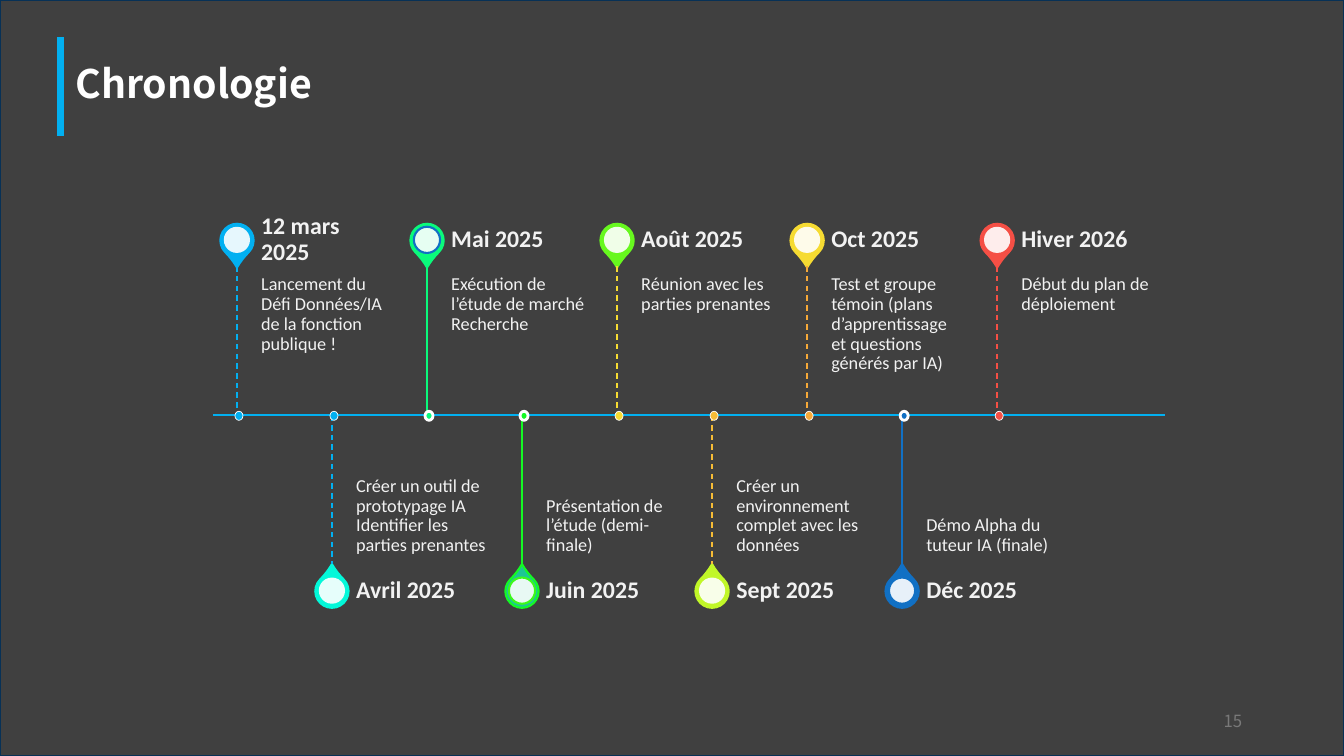
"""Build the dark "Chronologie" slide: nine pinned milestones alternating around an axis."""
from dataclasses import dataclass
from typing import Optional

import pptx
import pptx.dml.color
import pptx.enum.dml
import pptx.enum.shapes
import pptx.enum.text
import pptx.oxml
import pptx.oxml.ns
import pptx.shapes.autoshape
import pptx.shapes.base
import pptx.shapes.connector
import pptx.slide
import pptx.text.text
import pptx.util

Inches = pptx.util.Inches
Shape = pptx.enum.shapes.MSO_SHAPE
Anchor = pptx.enum.text.MSO_ANCHOR
Align = pptx.enum.text.PP_ALIGN


@dataclass(frozen=True)
class Theme:
    background: str = "404040"
    frame: str = "073156"
    accent: str = "02B0F1"
    white: str = "FFFFFF"
    text: str = "F2F2F2"
    muted: str = "797979"
    heading_font: str = "Noto Sans CJK SC"
    body_font: str = "Calibri"
    title_size: float = 28
    date_size: float = 17
    detail_size: float = 13
    number_size: float = 12


@dataclass(frozen=True)
class Box:
    left: float
    top: float
    width: float
    height: float


@dataclass(frozen=True)
class TextStyle:
    font: str
    size: float
    color: str
    bold: bool = False
    align: Align = Align.LEFT
    line_spacing: float = 1.0


@dataclass(frozen=True)
class Milestone:
    date: str
    detail: str
    pin: str
    stem: str
    ring: Optional[str] = None


THEME = Theme()
DATE_STYLE = TextStyle(THEME.body_font, THEME.date_size, THEME.text, True, line_spacing=0.9)
DETAIL_STYLE = TextStyle(THEME.body_font, THEME.detail_size, THEME.text, line_spacing=0.9)
AXIS_Y = 4.12
STEM_LENGTH = 1.48
FIRST_X, LAST_X = 2.35, 9.89
TEXT_WIDTH = 1.42
DATE_HEIGHT = 0.52

MILESTONES = (
    Milestone("12 mars 2025", "Lancement du Défi Données/IA de la fonction publique !", "02B0F1", "02B0F1"),
    Milestone("Avril 2025", "Créer un outil de prototypage IA\nIdentifier les parties prenantes",
              "03F8D9", "02B0F1"),
    Milestone("Mai 2025", "Exécution de l’étude de marché\nRecherche", "0AFA7B", "0AFA7B", "1170C4"),
    Milestone("Juin 2025", "Présentation de l’étude (demi-finale)", "1DC695", "14F924", "3DF91A"),
    Milestone("Août 2025", "Réunion avec les parties prenantes", "67F81E", "F6DB32"),
    Milestone("Sept 2025", "Créer un environnement complet avec les données", "C1F728", "F6BC36"),
    Milestone("Oct 2025", "Test et groupe témoin (plans d’apprentissage et questions générés par IA)",
              "F6DB32", "F6A938"),
    Milestone("Déc 2025", "Démo Alpha du tuteur IA (finale)", "1170C4", "1170C4", "1170C4"),
    Milestone("Hiver 2026", "Début du plan de déploiement", "F54F45", "F54F45"),
)


def rgb(color: str) -> pptx.dml.color.RGBColor:
    """Turn a hexadecimal string into a colour."""
    return pptx.dml.color.RGBColor.from_string(color)


def place(shape: pptx.shapes.base.BaseShape, box: Box) -> None:
    """Move and size a shape."""
    shape.left, shape.top = Inches(box.left), Inches(box.top)
    shape.width, shape.height = Inches(box.width), Inches(box.height)


def add_figure(page: pptx.slide.Slide, kind: Shape, box: Box, fill: str,
               line: Optional[str] = None, weight: float = 1.5) -> pptx.shapes.autoshape.Shape:
    """Draw a filled preset shape with an optional outline."""
    figure = page.shapes.add_shape(kind, 0, 0, 0, 0)
    place(figure, box)
    figure.shadow.inherit = False
    figure.fill.solid()
    figure.fill.fore_color.rgb = rgb(fill)
    if line is None:
        figure.line.fill.background()
    else:
        figure.line.color.rgb = rgb(line)
        figure.line.width = pptx.util.Pt(weight)
    return figure


def add_line(page: pptx.slide.Slide, start: tuple[float, float], end: tuple[float, float],
             color: str, weight: float) -> pptx.shapes.connector.Connector:
    """Draw a straight line without a shadow."""
    line = page.shapes.add_connector(
        pptx.enum.shapes.MSO_CONNECTOR.STRAIGHT, *(Inches(value) for value in start + end))
    line.line.color.rgb = rgb(color)
    line.line.width = pptx.util.Pt(weight)
    line._element.spPr.append(pptx.oxml.parse_xml(f"<a:effectLst {pptx.oxml.ns.nsdecls('a')}/>"))
    return line


def write(frame: pptx.text.text.TextFrame, text: str, style: TextStyle, anchor: Anchor) -> None:
    """Fill a text frame with one styled paragraph."""
    frame.word_wrap = True
    frame.vertical_anchor = anchor
    para = frame.paragraphs[0]
    para.text = text
    para.alignment = style.align
    para.line_spacing = style.line_spacing
    para.font.name = style.font
    para.font.size = pptx.util.Pt(style.size)
    para.font.bold = style.bold
    para.font.color.rgb = rgb(style.color)


def add_text(page: pptx.slide.Slide, box: Box, text: str, style: TextStyle, anchor: Anchor,
             insets: tuple[float, float, float, float] = (0.1, 0.05, 0.1, 0.05)) -> None:
    """Add a text box with left, top, right and bottom insets."""
    frame = page.shapes.add_textbox(0, 0, 0, 0)
    place(frame, box)
    body = frame.text_frame
    body.margin_left, body.margin_top, body.margin_right, body.margin_bottom = map(Inches, insets)
    write(body, text, style, anchor)


def add_milestone(page: pptx.slide.Slide, milestone: Milestone, x: float, above: bool) -> None:
    """Draw a milestone's pin, texts, stem and axis dot."""
    stem_end = AXIS_Y - STEM_LENGTH if above else AXIS_Y + STEM_LENGTH
    date_top = stem_end - DATE_HEIGHT if above else stem_end
    ringed = milestone.ring is not None

    pin = add_figure(page, Shape.TEAR, Box(x - 0.165, date_top + 0.1, 0.33, 0.33),
                     milestone.pin, milestone.stem if ringed else milestone.pin)
    pin.adjustments[0] = 1.15
    pin.rotation = 135 if above else 315
    disc = add_figure(page, Shape.OVAL, Box(x - 0.13, date_top + 0.13, 0.26, 0.26),
                      THEME.white, milestone.ring)
    tint = disc._element.spPr.find(pptx.oxml.ns.qn("a:solidFill"))[0]
    tint.append(pptx.oxml.parse_xml(f"<a:alpha {pptx.oxml.ns.nsdecls('a')} val='90000'/>"))

    text_left = x + 0.24
    add_text(page, Box(text_left, min(AXIS_Y, stem_end), TEXT_WIDTH, STEM_LENGTH),
             milestone.detail, DETAIL_STYLE, Anchor.TOP if above else Anchor.BOTTOM,
             (0, 0.09, 0.09, 0.14) if above else (0, 0.14, 0, 0.09))
    add_text(page, Box(text_left, date_top, TEXT_WIDTH, DATE_HEIGHT),
             milestone.date, DATE_STYLE, Anchor.MIDDLE, (0, 0, 0.12, 0))

    stem = add_line(page, (x, min(AXIS_Y, stem_end)), (x, max(AXIS_Y, stem_end)), milestone.stem, 1)
    if not ringed:
        stem.line.dash_style = pptx.enum.dml.MSO_LINE.DASH
    add_figure(page, Shape.OVAL, Box(x - 0.02, AXIS_Y - 0.04, 0.08, 0.09),
               milestone.stem, THEME.white, 2 if ringed else 0.5)


def main() -> None:
    """Assemble and save the slide."""
    deck = pptx.Presentation()
    deck.slide_width, deck.slide_height = Inches(13.33), Inches(7.5)
    page = deck.slides.add_slide(deck.slide_layouts.get_by_name("Title Only"))

    panel = add_figure(page, Shape.RECTANGLE, Box(0, 0, 13.33, 7.5), THEME.background, THEME.frame)
    page.shapes._spTree.insert(2, panel._element)

    add_line(page, (2.11, AXIS_Y), (11.55, AXIS_Y), THEME.accent, 1.5)
    pitch = (LAST_X - FIRST_X) / (len(MILESTONES) - 1)
    for index, milestone in enumerate(MILESTONES):
        add_milestone(page, milestone, FIRST_X + index * pitch, index % 2 == 0)

    title = page.shapes.title
    place(title, Box(0.65, 0.54, 5.27, 0.57))
    write(title.text_frame, "Chronologie",
          TextStyle(THEME.heading_font, THEME.title_size, THEME.white, True), Anchor.MIDDLE)
    add_line(page, (0.6, 0.37), (0.6, 1.35), THEME.accent, 4.5)
    add_text(page, Box(9.42, 6.95, 3, 0.4), "15",
             TextStyle(THEME.heading_font, THEME.number_size, THEME.muted, align=Align.RIGHT), Anchor.MIDDLE)
    deck.save("out.pptx")


if __name__ == "__main__":
    main()
